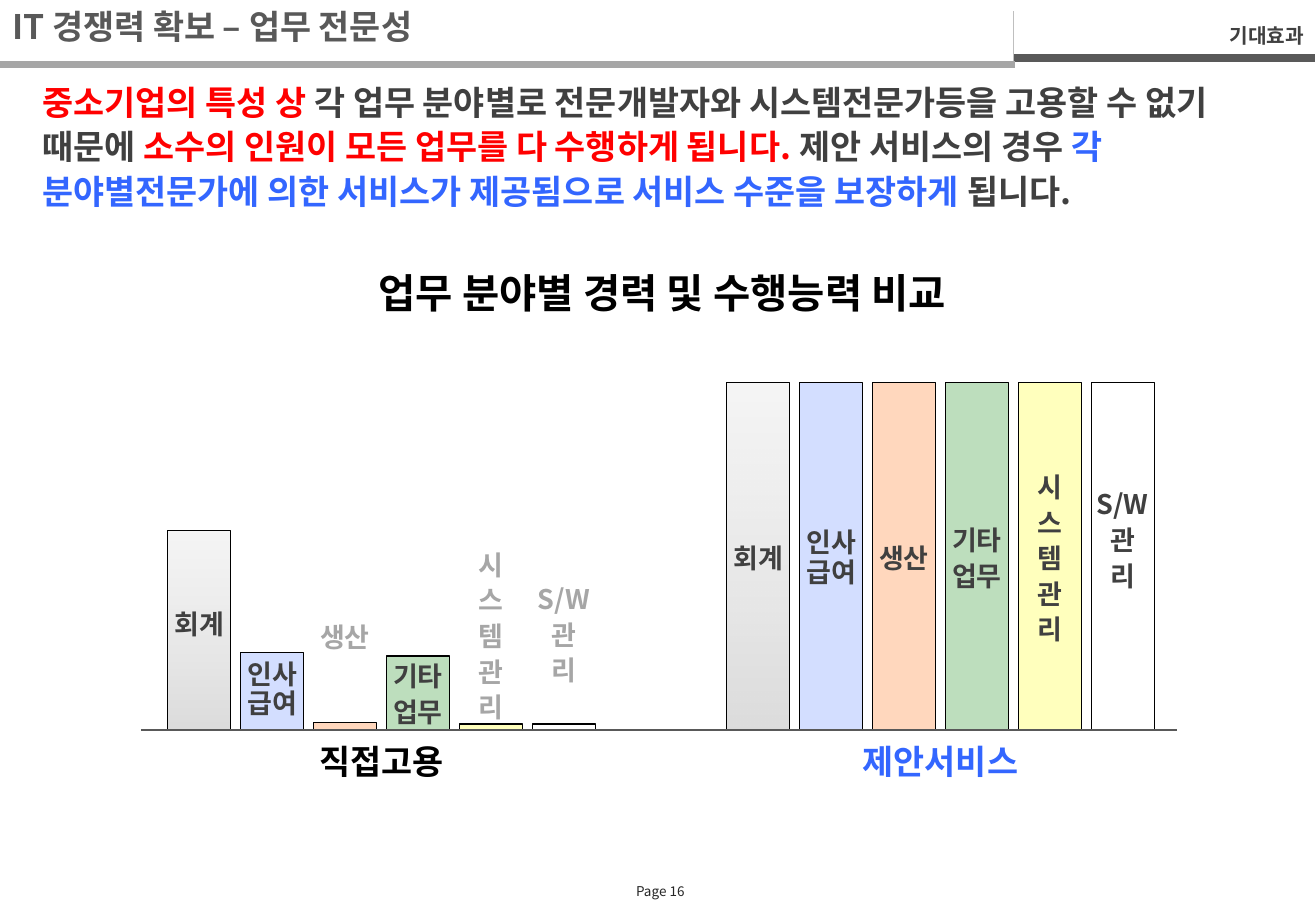
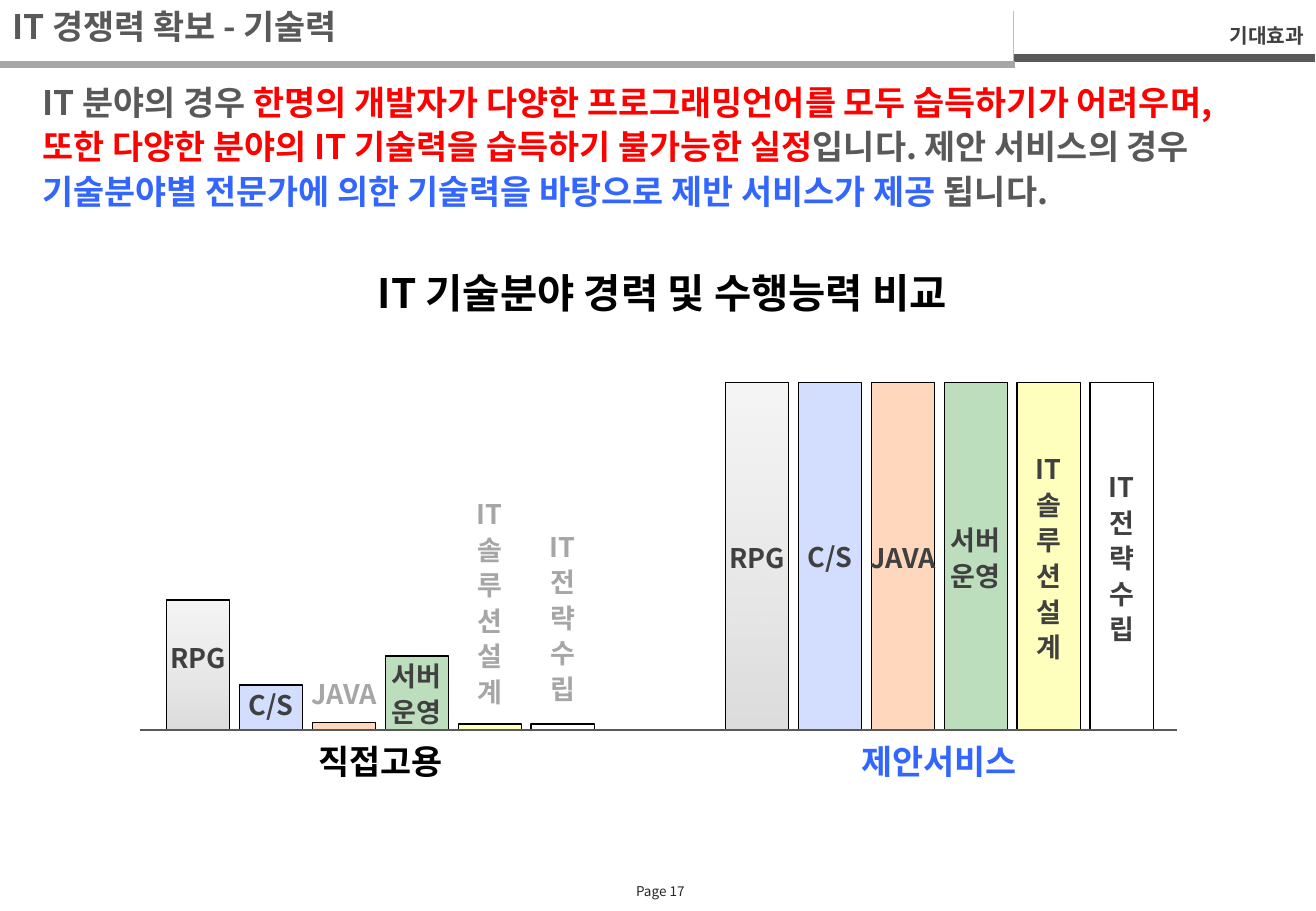
import copy

import pptx
import pptx.dml.color
import pptx.enum.shapes
import pptx.enum.text
import pptx.oxml.ns
import pptx.util
from lxml import etree

Inches = pptx.util.Inches
Pt = pptx.util.Pt
RGBColor = pptx.dml.color.RGBColor
Align = pptx.enum.text.PP_ALIGN
Anchor = pptx.enum.text.MSO_ANCHOR
AutoSize = pptx.enum.text.MSO_AUTO_SIZE
RECTANGLE = pptx.enum.shapes.MSO_SHAPE.RECTANGLE
STRAIGHT = pptx.enum.shapes.MSO_CONNECTOR.STRAIGHT
qn = pptx.oxml.ns.qn

FONT = "Noto Sans CJK KR"
BLACK = RGBColor(0x00, 0x00, 0x00)
INK = RGBColor(0x26, 0x26, 0x26)
DARK = RGBColor(0x40, 0x40, 0x40)
GRAY = RGBColor(0x59, 0x59, 0x59)
SILVER = RGBColor(0xA6, 0xA6, 0xA6)
PALE = RGBColor(0xBF, 0xBF, 0xBF)
WHITE = RGBColor(0xFF, 0xFF, 0xFF)
RED = RGBColor(0xFF, 0x00, 0x00)
BLUE = RGBColor(0x33, 0x66, 0xFF)
ORANGE = RGBColor(0xFF, 0x66, 0x00)
GREEN = RGBColor(0x00, 0x80, 0x00)
YELLOW = RGBColor(0xFF, 0xFF, 0x00)

GRADIENT = [(0, RGBColor(0xBD, 0xBD, 0xBD)), (0.35, RGBColor(0xD1, 0xD1, 0xD1)),
            (1, RGBColor(0xEE, 0xEE, 0xEE))]
# Fill (None for the gradient) and opacity in percent, bar by bar
BAR_FILLS = [(None, 52), (BLUE, 21), (ORANGE, 26), (GREEN, 26), (YELLOW, 26), (WHITE, 26)]

BASELINE = 6.01
BAR_WIDTH, BAR_STEP = 0.52, 0.6
FULL_HEIGHT = 2.86
GROUP_STEP = 4.6
GROUP_WIDTH = 5 * BAR_STEP + BAR_WIDTH
LABEL_WIDTH = 0.76
CAPTION_WIDTH = 2.83

HEADER_LINES = [
    (8.34, 0.48, 10.82, 0.48, GRAY, 4.5),
    (8.34, 0.55, 8.34, 0.09, PALE, 0.25),
    (0, 0.53, 8.35, 0.53, SILVER, 4.5),
]

# bars: label lines, direct-hire height, label centre for direct hire and for the service
PAGES = [
    {
        "number": 16,
        "title": "IT 경쟁력 확보 – 업무 전문성",
        "message": [
            ("중소기업의 특성 상 ", RED),
            ("각 업무 분야별로 전문개발자와 시스템전문가등을 고용할 수 없기 때문에 ", DARK),
            ("소수의 인원이 모든 업무를 다 수행하게 됩니다. ", RED),
            ("제안 서비스의 경우 ", DARK),
            ("각 분야별전문가에 의한 서비스가 제공됨으로 서비스 수준을 보장하게", BLUE),
            (" 됩니다.", DARK),
        ],
        "heading": "업무 분야별 경력 및 수행능력 비교",
        "left": 1.38,
        "bars": [
            (["회계"], 1.64, 5.12, 4.58),
            (["인사", "급여"], 0.64, 5.68, 4.6),
            (["생산"], 0.06, 5.23, 4.58),
            (["기타", "업무"], 0.61, 5.7, 4.58),
            (list("시스템관리"), 0.05, 5.22, 4.58),
            (["S/W", "관", "리"], 0.05, 5.21, 4.43),
        ],
    },
    {
        "number": 17,
        "title": "IT 경쟁력 확보 - 기술력",
        "message": [
            ("IT 분야의 경우 ", GRAY),
            ("한명의 개발자가 다양한 프로그래밍언어를 모두 습득하기가 어려우며, "
             "또한 다양한 분야의 IT 기술력을 습득하기 불가능한 실정", RED),
            ("입니다. 제안 서비스의 경우 ", GRAY),
            ("기술분야별 전문가에 의한 기술력을 바탕으로 제반 서비스가 제공", BLUE),
            (" 됩니다.", GRAY),
        ],
        "heading": "IT 기술분야 경력 및 수행능력 비교",
        "left": 1.37,
        "bars": [
            (["RPG"], 1.07, 5.4, 4.58),
            (["C/S"], 0.37, 5.82, 4.6),
            (["JAVA"], 0.06, 5.7, 4.58),
            (["서버", "운영"], 0.61, 5.7, 4.58),
            (["IT", *"솔루션설계"], 0.05, 4.95, 4.58),
            (["IT", *"전략수립"], 0.05, 5.07, 4.58),
        ],
    },
]


def write(box, paragraphs, size, align=Align.LEFT, spacing=1.0, bold=True,
          anchor=Anchor.TOP, wrap=True, fit=AutoSize.SHAPE_TO_FIT_TEXT):
    """Fill a shape with paragraphs, each a list of (text, colour) spans."""
    frame = box.text_frame
    settings = {"word_wrap": wrap, "auto_size": fit, "vertical_anchor": anchor}
    for name, value in settings.items():
        setattr(frame, name, value)
    for index, spans in enumerate(paragraphs):
        para = frame.add_paragraph() if index else frame.paragraphs[0]
        para.alignment = align
        para.line_spacing = spacing
        for text, color in spans:
            span = para.add_run()
            span.text = text
            for name, value in {"name": FONT, "size": Pt(size), "bold": bold}.items():
                setattr(span.font, name, value)
            span.font.color.rgb = color
            east_asian = etree.SubElement(span.font._element, qn("a:ea"))
            east_asian.set("typeface", FONT)


def draw_line(page, x1, y1, x2, y2, color, width):
    line = page.shapes.add_connector(STRAIGHT, Inches(x1), Inches(y1), Inches(x2), Inches(y2))
    line.line.color.rgb = color
    line.line.width = Pt(width)
    etree.SubElement(line._element.spPr, qn("a:effectLst"))


deck = pptx.Presentation()
deck.slide_width = Inches(10.83)
deck.slide_height = Inches(7.5)

for content in PAGES:
    page = deck.slides.add_slide(deck.slide_layouts[5])
    shapes = page.shapes

    for header_line in HEADER_LINES:
        draw_line(page, *header_line)
    footer = shapes.add_textbox(Inches(5.2), Inches(7.27), Inches(0.47), Inches(0.14))
    for side in ("left", "top", "right", "bottom"):
        setattr(footer.text_frame, "margin_" + side, 0)
    write(footer, [[(f"Page {content['number']}", INK)]], 8, Align.CENTER,
          bold=False, anchor=Anchor.MIDDLE, wrap=False)

    title = shapes.title
    bounds = {"left": 0, "top": 0, "width": 8.27, "height": 0.49}
    for name, value in bounds.items():
        setattr(title, name, Inches(value))
    write(title, [[(content["title"], GRAY)]], 20, fit=AutoSize.NONE)

    section = shapes.add_textbox(Inches(8.38), Inches(0.08), Inches(2.45), Inches(0.35))
    write(section, [[("기대효과", DARK)]], 12, Align.RIGHT, 1.3)

    message = shapes.add_shape(RECTANGLE, Inches(0.25), Inches(0.59), Inches(10.24), Inches(1.21))
    message.shadow.inherit = False
    message.fill.solid()
    message.fill.fore_color.rgb = WHITE
    message.line.fill.background()
    write(message, [content["message"]], 20, spacing=1.1)

    heading = shapes.add_textbox(Inches(2.9), Inches(2.28), Inches(5.1), Inches(0.4))
    write(heading, [[(content["heading"], BLACK)]], 24, Align.CENTER, Pt(20), wrap=False)

    for group, (caption, color) in enumerate([("직접고용", BLACK), ("제안서비스", BLUE)]):
        group_left = content["left"] + group * GROUP_STEP
        for index, (lines, direct_height, *centres) in enumerate(content["bars"]):
            left = group_left + index * BAR_STEP
            height = FULL_HEIGHT if group else direct_height
            bar = shapes.add_shape(RECTANGLE, Inches(left), Inches(BASELINE - height),
                                   Inches(BAR_WIDTH), Inches(height))
            bar.shadow.inherit = False
            fill, opacity = BAR_FILLS[index]
            if fill is None:
                bar.fill.gradient()
                bar.fill.gradient_angle = 90
                stop_list = bar._element.find(".//" + qn("a:gsLst"))
                stop_list.insert(1, copy.deepcopy(stop_list[0]))
                for stop, (position, shade) in zip(bar.fill.gradient_stops, GRADIENT):
                    stop.position = position
                    stop.color.rgb = shade
            else:
                bar.fill.solid()
                bar.fill.fore_color.rgb = fill
            for tint in list(bar._element.iter(qn("a:srgbClr"))):
                etree.SubElement(tint, qn("a:alpha")).set("val", str(opacity * 1000))
            bar.line.color.rgb = BLACK
            bar.line.width = Pt(0.75)

            spacing, line_height = (0.9, 0.24) if index == 1 else (1.1, 0.29)
            label_height = 0.1 + line_height * len(lines)
            label = shapes.add_textbox(Inches(left + (BAR_WIDTH - LABEL_WIDTH) / 2),
                                       Inches(centres[group] - label_height / 2),
                                       Inches(LABEL_WIDTH), Inches(label_height))
            label_color = SILVER if height < 0.1 else DARK
            write(label, [[(line, label_color)] for line in lines], 16, Align.CENTER,
                  spacing, anchor=Anchor.MIDDLE)

        caption_box = shapes.add_textbox(Inches(group_left + (GROUP_WIDTH - CAPTION_WIDTH) / 2),
                                         Inches(6.05), Inches(CAPTION_WIDTH), Inches(0.44))
        write(caption_box, [[(caption, color)]], 20, Align.CENTER)

    draw_line(page, content["left"] - 0.22, BASELINE, 9.69, BASELINE, GRAY, 1)

deck.save("out.pptx")
